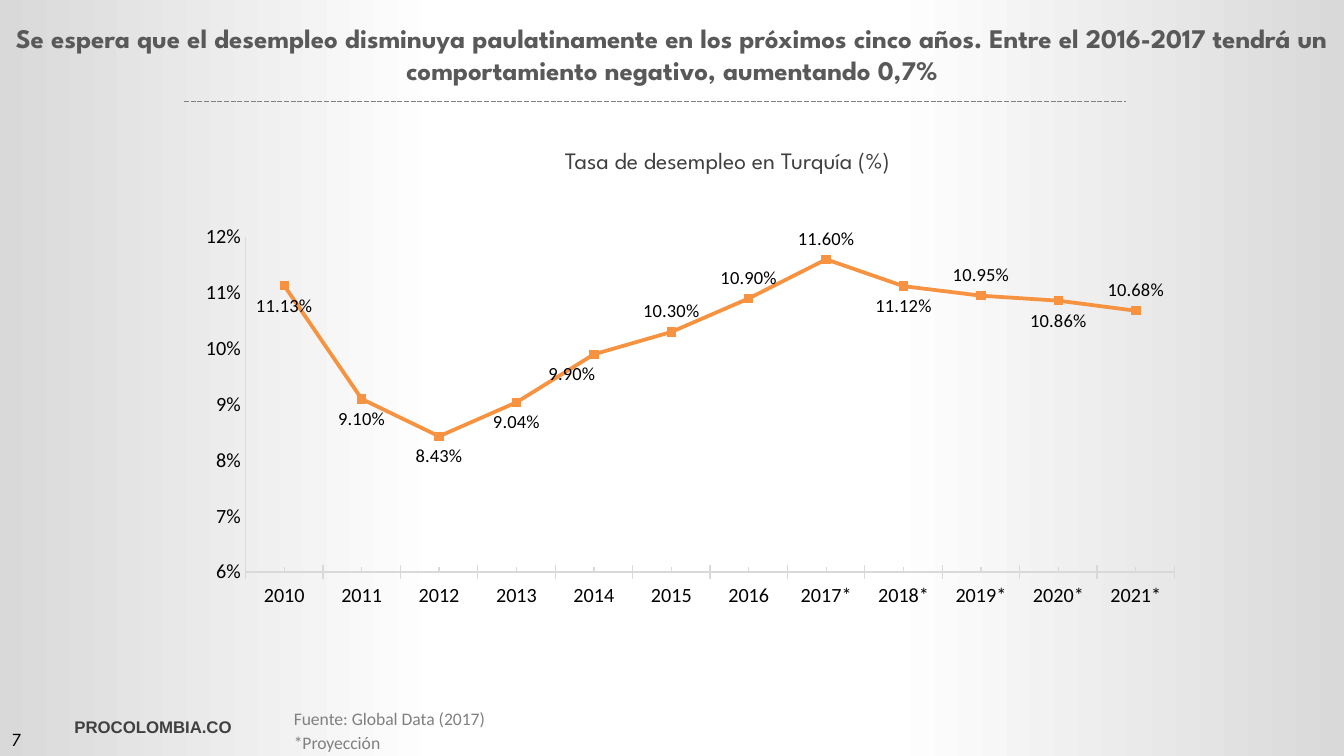
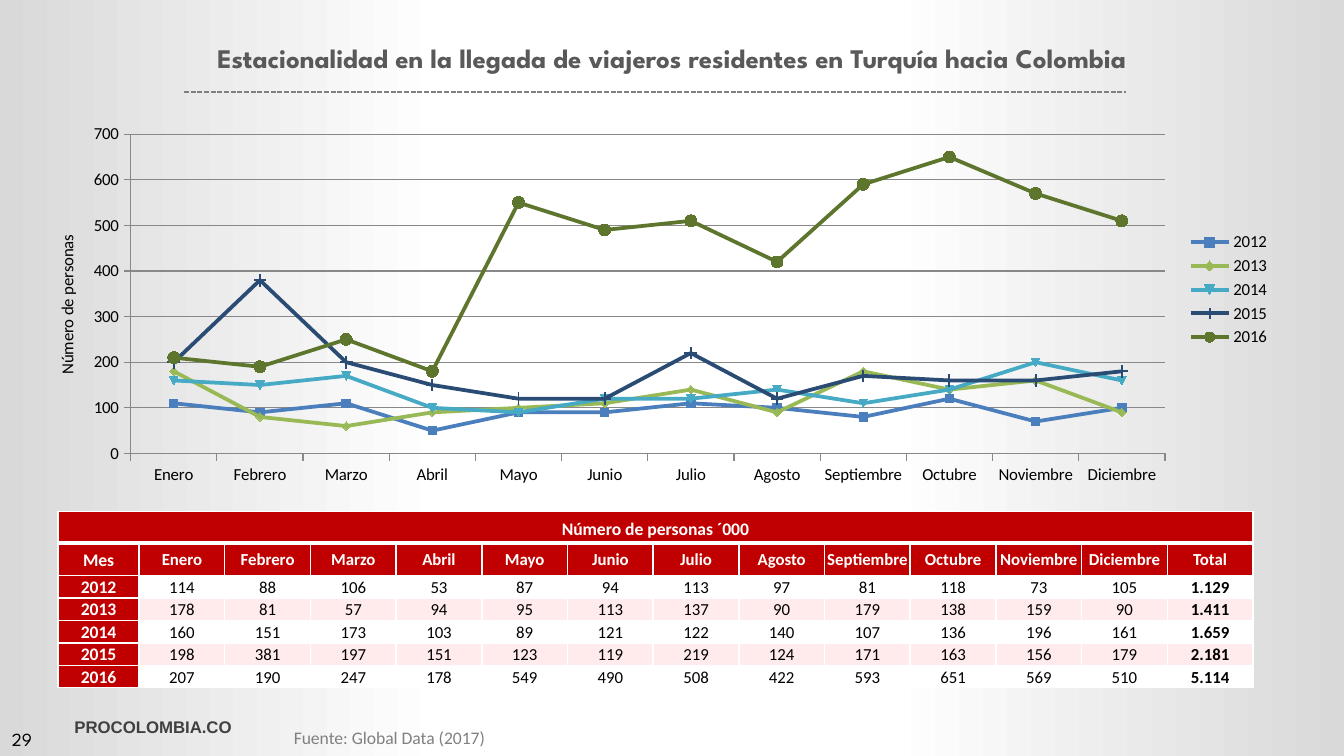
from dataclasses import dataclass
from typing import Optional

from pptx import Presentation
from pptx.chart.data import CategoryChartData
from pptx.dml.color import RGBColor
from pptx.enum.chart import XL_CHART_TYPE as CT, XL_LABEL_POSITION as LP
from pptx.enum.chart import XL_LEGEND_POSITION, XL_MARKER_STYLE as MS, XL_TICK_MARK as TM
from pptx.enum.dml import MSO_LINE
from pptx.enum.shapes import MSO_CONNECTOR, MSO_SHAPE
from pptx.enum.text import MSO_ANCHOR as ANCHOR, MSO_AUTO_SIZE, PP_ALIGN as AL
from pptx.oxml import parse_xml
from pptx.oxml.ns import nsdecls
from pptx.util import Inches, Pt

W, H = 11.11, 6.25
HEAD_FONT, BODY_FONT = "League Spartan", "Calibri"
COLORS = {
    "white": "FFFFFF", "edge": "D9D9D9", "title": "595959", "dark": "404040",
    "grey": "808080", "axis": "888888", "black": "000000", "red": "C00000",
    "pink": "FFEBEB", "orange": "F69240", "orange_mark": "F79646",
}
MONTHS = ["Enero", "Febrero", "Marzo", "Abril", "Mayo", "Junio", "Julio", "Agosto",
          "Septiembre", "Octubre", "Noviembre", "Diciembre"]


@dataclass
class Box:
    x: float
    y: float
    w: float
    h: float

    def emu(self) -> tuple:
        return tuple(Inches(v) for v in (self.x, self.y, self.w, self.h))


@dataclass
class Style:
    size: float
    color: str
    font: str = BODY_FONT
    bold: bool = False
    align: AL = AL.LEFT


@dataclass
class Line:
    name: str
    values: list
    color: str
    marker_fill: Optional[str]
    marker: Optional[MS] = None
    marker_size: int = 5


TITLE = Style(16, COLORS["title"], HEAD_FONT, True, AL.CENTER)
SUBTITLE = Style(14, COLORS["dark"], HEAD_FONT, align=AL.CENTER)
NUMBER = Style(11, COLORS["black"], HEAD_FONT)
SITE = Style(10, COLORS["dark"], "Arial", True, AL.CENTER)
SOURCE = Style(10.5, COLORS["grey"])
HEADER = Style(10.5, COLORS["white"], bold=True, align=AL.CENTER)
MONTH = Style(10, COLORS["white"], bold=True, align=AL.CENTER)
VALUE = Style(10, COLORS["black"], align=AL.CENTER)
TOTAL = Style(10, COLORS["black"], bold=True, align=AL.CENTER)

UNEMPLOYMENT = {
    "2010": 0.1113, "2011": 0.091, "2012": 0.0843, "2013": 0.0904, "2014": 0.099,
    "2015": 0.103, "2016": 0.109, "2017*": 0.116, "2018*": 0.1112, "2019*": 0.1095,
    "2020*": 0.1086, "2021*": 0.1068,
}
TRAVELLERS = [
    Line("2012", [114, 88, 106, 53, 87, 94, 113, 97, 81, 118, 73, 105],
         "4B7EBC", "4F81BD"),
    Line("2013", [178, 81, 57, 94, 95, 113, 137, 90, 179, 138, 159, 90],
         "98B955", "9BBB59"),
    Line("2014", [160, 151, 173, 103, 89, 121, 122, 140, 107, 136, 196, 161],
         "46AAC5", "4BACC6"),
    Line("2015", [198, 381, 197, 151, 123, 119, 219, 124, 171, 163, 156, 179],
         "294B74", None, MS.PLUS, 7),
    Line("2016", [207, 190, 247, 178, 549, 490, 508, 422, 593, 651, 569, 510],
         "5D752D", "5F7530", MS.CIRCLE, 7),
]


# Text
def rgb(color: str) -> RGBColor:
    return RGBColor.from_string(color)


def set_font(font, st: Style) -> None:
    font.size, font.name, font.bold = Pt(st.size), st.font, st.bold
    font.color.rgb = rgb(st.color)


def write(tf, lines: list, st: Style) -> None:
    for i, line in enumerate(lines):
        p = tf.paragraphs[0] if i == 0 else tf.add_paragraph()
        p.text, p.alignment = line, st.align
        p.space_before = Pt(0.2 * st.size if i else 0)
        set_font(p.font, st)


def add_text(s, box: Box, lines: list, st: Style, anchor=ANCHOR.TOP):
    sp = s.shapes.add_textbox(*box.emu())
    tf = sp.text_frame
    tf.word_wrap, tf.vertical_anchor = True, anchor
    write(tf, lines, st)
    return sp


# Shared frame
def decorate_master(prs, s) -> None:
    """Draw the backdrop and site name, then hand them to the slide master."""
    backdrop = s.shapes.add_shape(MSO_SHAPE.RECTANGLE, *Box(0, 0, W, H).emu())
    backdrop.shadow.inherit = False
    backdrop.line.fill.background()
    backdrop.fill.gradient()
    backdrop.fill.gradient_angle = 180
    stops = backdrop.element.xpath(".//a:gsLst")[0]
    for old in list(stops):
        stops.remove(old)
    for pos, name in ((0, "edge"), (34, "white"), (67, "white"), (100, "edge")):
        stops.append(parse_xml(f'<a:gs {nsdecls("a")} pos="{pos * 1000}">'
                               f'<a:srgbClr val="{COLORS[name]}"/></a:gs>'))
    site = add_text(s, Box(0.13, 5.88, 2.27, 0.27), ["PROCOLOMBIA.CO"], SITE)
    for shape_id, sp in enumerate((backdrop, site), 20):
        sp.element.xpath("./p:nvSpPr/p:cNvPr")[0].set("id", str(shape_id))
        prs.slide_master.shapes.element.append(sp.element)


def frame_slide(s, title: str, title_box: Box, rule_y: float, number: str,
                source: list, source_box: Box) -> None:
    sp = s.shapes.title
    sp.left, sp.top, sp.width, sp.height = title_box.emu()
    tf = sp.text_frame
    tf.word_wrap, tf.vertical_anchor = True, ANCHOR.TOP
    tf.auto_size = MSO_AUTO_SIZE.NONE
    write(tf, [title], TITLE)

    rule = s.shapes.add_connector(MSO_CONNECTOR.STRAIGHT, Inches(1.52), Inches(rule_y),
                                  Inches(9.31), Inches(rule_y))
    rule.line.color.rgb = rgb(COLORS["grey"])
    rule.line.width, rule.line.dash_style = Pt(1), MSO_LINE.SQUARE_DOT
    rule.element.spPr.append(parse_xml(f'<a:effectLst {nsdecls("a")}/>'))

    add_text(s, Box(0, 5.85, 0.67, 0.4), [number], NUMBER, ANCHOR.BOTTOM)
    add_text(s, source_box, source, SOURCE)


# Charts
def style_axis(axis, size: float, color: str, tick: TM) -> None:
    axis.major_tick_mark, axis.minor_tick_mark = tick, TM.NONE
    axis.has_major_gridlines = False
    set_font(axis.tick_labels.font, Style(size, COLORS["black"]))
    axis.format.line.color.rgb = rgb(color)
    axis.format.line.width = Pt(0.75)


def scale_axis(axis, low: float, high: float, step: float, fmt: str) -> None:
    axis.minimum_scale, axis.maximum_scale, axis.major_unit = low, high, step
    axis.tick_labels.number_format = fmt
    axis.tick_labels.number_format_is_linked = False


def place_plot(chart, box: Box, plot: Box) -> None:
    """Fix the inner plot, in inches inside the chart, on clear backgrounds."""
    area = chart.element.xpath(".//c:plotArea")[0]
    for old in area.xpath("./c:layout"):
        area.remove(old)
    area.insert(0, parse_xml(
        f'<c:layout {nsdecls("c")}><c:manualLayout><c:layoutTarget val="inner"/>'
        '<c:xMode val="edge"/><c:yMode val="edge"/>'
        f'<c:x val="{plot.x / box.w}"/><c:y val="{plot.y / box.h}"/>'
        f'<c:w val="{plot.w / box.w}"/><c:h val="{plot.h / box.h}"/>'
        '</c:manualLayout></c:layout>'))
    clear = f'<c:spPr {nsdecls("c", "a")}><a:noFill/><a:ln><a:noFill/></a:ln></c:spPr>'
    area.append(parse_xml(clear))
    chart.element.xpath("./c:chart")[0].addnext(parse_xml(clear))


def add_line_chart(s, box: Box, plot: Box, cats: list, lines: list, fmt: str,
                   size: float, digits: int):
    data = CategoryChartData(number_format=fmt)
    data.categories = cats
    for line in lines:
        data.add_series(line.name, [round(v, digits) for v in line.values])
    chart = s.shapes.add_chart(CT.LINE_MARKERS, *box.emu(), data).chart
    chart.has_title = chart.has_legend = False
    set_font(chart.font, Style(size, COLORS["black"]))
    place_plot(chart, box, plot)
    chart.plots[0].vary_by_categories = False
    for line, ser in zip(lines, chart.plots[0].series):
        ser.smooth = False
        ser.format.line.color.rgb = rgb(line.color)
        ser.format.line.width = Pt(2.25)
        marker = ser.marker
        marker.size = line.marker_size
        if line.marker is not None:
            marker.style = line.marker
        if line.marker_fill:
            marker.format.fill.solid()
            marker.format.fill.fore_color.rgb = rgb(line.marker_fill)
        else:
            marker.format.fill.background()
        marker.format.line.color.rgb = rgb(line.color)
    return chart


def unemployment_chart(s) -> None:
    rate = Line("Series 1", list(UNEMPLOYMENT.values()),
                COLORS["orange"], COLORS["orange_mark"])
    chart = add_line_chart(s, Box(0.91, 1.79, 9.06, 3.38), Box(1.12, 0.17, 7.68, 2.77),
                           list(UNEMPLOYMENT), [rate], "0.00%", 10, digits=4)
    style_axis(chart.category_axis, 12, COLORS["edge"], TM.CROSS)
    chart.category_axis.minor_tick_mark = TM.INSIDE
    style_axis(chart.value_axis, 12, COLORS["edge"], TM.NONE)
    scale_axis(chart.value_axis, 0.06, 0.12, 0.01, "0%")

    ser, label_style = chart.plots[0].series[0], Style(11, COLORS["black"])
    labels = ser.data_labels
    labels.show_value, labels.position = True, LP.BELOW
    labels.number_format, labels.number_format_is_linked = "0.00%", False
    set_font(labels.font, label_style)
    shifted = 4
    for i in (shifted, 5, 6, 7, 9, 11):
        label = ser.points[i].data_label
        set_font(label.font, label_style)
        label.position = LP.BELOW if i == shifted else LP.ABOVE
    idx = chart.element.xpath(f".//c:dLbl/c:idx[@val='{shifted}']")[0]
    idx.addnext(parse_xml(f'<c:layout {nsdecls("c")}><c:manualLayout><c:x val="-0.02"/>'
                          '<c:y val="0"/></c:manualLayout></c:layout>'))


def travellers_chart(s) -> None:
    chart = add_line_chart(s, Box(0.44, 0.72, 10.16, 3.35), Box(0.64, 0.39, 8.55, 2.64),
                           MONTHS, TRAVELLERS, "0", 11, digits=-1)
    for axis in (chart.category_axis, chart.value_axis):
        style_axis(axis, 10, COLORS["axis"], TM.OUTSIDE)
    axis = chart.value_axis
    scale_axis(axis, 0, 700, 100, "0")
    axis.has_major_gridlines = True
    axis.major_gridlines.format.line.color.rgb = rgb(COLORS["axis"])
    axis.major_gridlines.format.line.width = Pt(0.75)
    write(axis.axis_title.text_frame, ["Número de personas"], VALUE)
    chart.has_legend = True
    chart.legend.position = XL_LEGEND_POSITION.RIGHT
    chart.legend.include_in_layout = False
    set_font(chart.legend.font, Style(10, COLORS["black"]))


# Table
def fill_cell(cell, text: str, st: Style, fill: str, anchor, bottom: int = 1,
              top: int = 1) -> None:
    cell.margin_left = cell.margin_right = cell.margin_top = Inches(0.01)
    cell.margin_bottom, cell.vertical_anchor = 0, anchor
    write(cell.text_frame, [text], st)
    cell.fill.solid()
    cell.fill.fore_color.rgb = rgb(fill)
    tc_pr = cell._tc.get_or_add_tcPr()
    for i, (side, width) in enumerate((("L", 1), ("R", 1), ("T", top), ("B", bottom))):
        tc_pr.insert(i, parse_xml(
            f'<a:ln{side} {nsdecls("a")} w="{Pt(width)}"><a:solidFill>'
            f'<a:srgbClr val="{COLORS["white"]}"/></a:solidFill></a:ln{side}>'))


def travellers_table(s) -> None:
    box, first_w, heights = Box(0.48, 4.23, 9.88, 1.43), 0.67, [0.26, 0.27] + [0.18] * 5
    heads = ["Mes", *MONTHS, "Total"]
    last = len(heads) - 1
    table = s.shapes.add_table(len(heights), len(heads), *box.emu()).table
    table.first_row = table.horz_banding = False
    for i, col in enumerate(table.columns):
        col.width = Inches(first_w if i == 0 else (box.w - first_w) / last)
    for row, height in zip(table.rows, heights):
        row.height = Inches(height)

    caption = table.cell(0, 0)
    caption.merge(table.cell(0, last))
    for c, head in enumerate(heads):
        fill_cell(table.cell(0, c), "" if c else "Número de personas ´000", HEADER,
                  COLORS["red"], ANCHOR.MIDDLE, bottom=3)
        fill_cell(table.cell(1, c), head, MONTH if c else HEADER,
                  COLORS["red"], ANCHOR.MIDDLE, top=3)
    caption.text_frame.paragraphs[0].line_spacing = 1.15
    for r, year in enumerate(TRAVELLERS, 2):
        band = COLORS["pink" if r % 2 else "white"]
        total = f"{sum(year.values):,}".replace(",", ".")
        fill_cell(table.cell(r, 0), year.name, HEADER, COLORS["red"], ANCHOR.MIDDLE)
        for c, value in enumerate([*year.values, total], 1):
            fill_cell(table.cell(r, c), str(value), TOTAL if c == last else VALUE,
                      band, ANCHOR.BOTTOM)


def main() -> None:
    prs = Presentation()
    prs.slide_width, prs.slide_height = Inches(W), Inches(H)
    title_only = prs.slide_layouts[5]

    # Unemployment
    s = prs.slides.add_slide(title_only)
    decorate_master(prs, s)
    frame_slide(s, "Se espera que el desempleo disminuya paulatinamente en los próximos "
                "cinco años. Entre el 2016-2017 tendrá un comportamiento negativo, "
                "aumentando 0,7%", Box(0, 0.13, W, 0.63), 0.84, "7",
                ["Fuente: Global Data (2017)", "*Proyección"], Box(2.33, 5.8, 2.99, 0.45))
    add_text(s, Box(1.85, 1.16, 8.33, 0.34), ["Tasa de desempleo en Turquía (%)"], SUBTITLE)
    unemployment_chart(s)

    # Travellers by month
    s = prs.slides.add_slide(title_only)
    frame_slide(s, "Estacionalidad en la llegada de viajeros residentes en Turquía hacia "
                "Colombia", Box(0, 0.29, W, 0.35), 0.76, "29",
                ["Fuente: Global Data (2017)"], Box(2.33, 5.96, 3.62, 0.29))
    travellers_chart(s)
    travellers_table(s)
    prs.save("out.pptx")


if __name__ == "__main__":
    main()
